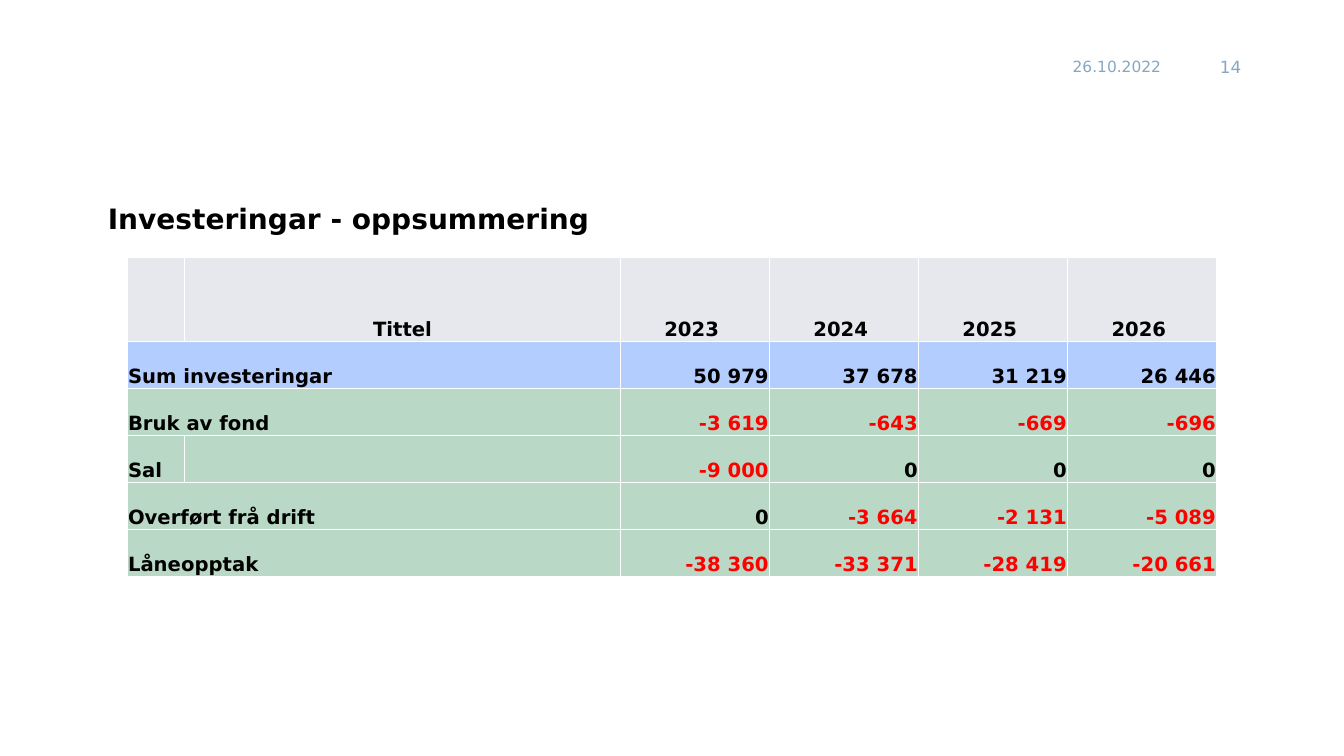
from dataclasses import dataclass

from lxml.etree import SubElement
from pptx import Presentation
from pptx.dml.color import RGBColor
from pptx.enum.text import MSO_ANCHOR, PP_ALIGN
from pptx.oxml.ns import qn
from pptx.util import Inches, Pt


@dataclass(frozen=True)
class Theme:
    font: str = "DejaVu Sans"
    ink: str = "000000"
    negative: str = "FF0000"
    muted: str = "86A7C2"
    header_fill: str = "E7E8ED"
    total_fill: str = "B4CDFF"
    funding_fill: str = "B9D9C6"
    border: str = "FFFFFF"
    title_size: int = 20
    table_size: int = 14
    number_size: int = 12
    date_size: int = 11


@dataclass(frozen=True)
class Box:
    left: int
    top: int
    width: int
    height: int

    def inner(self, left, top, width, height):
        """Return the inner box given in percent of this one."""
        return Box(self.left + round(self.width * left / 100),
                   self.top + round(self.height * top / 100),
                   round(self.width * width / 100),
                   round(self.height * height / 100))


THEME = Theme()
HEADER = ["", "Tittel", "2023 ", "2024 ", "2025 ", "2026 "]
INVESTMENTS = [
    ["Sum investeringar", "", "50 979", "37 678", "31 219", "26 446"],
    ["Bruk av fond", "", "-3 619", "-643", "-669", "-696"],
    ["Sal", "", "-9 000", "0", "0", "0"],
    ["Overført frå drift", "", "0", "-3 664", "-2 131", "-5 089"],
    ["Låneopptak", "", "-38 360", "-33 371", "-28 419", "-20 661"],
]
UNMERGED_LABEL = "Sal"
COLUMN_SHARES = [57, 433] + [148] * 4
ROW_SHARES = [9] + [5] * len(INVESTMENTS)


def add_run(paragraph, text, size, color, bold=False):
    run = paragraph.add_run()
    run.text = text
    run.font.name = THEME.font
    run.font.size = Pt(size)
    run.font.bold = bold
    run.font.color.rgb = RGBColor.from_string(color)


def add_text(slide, box, text, size, color, bold=False, align=PP_ALIGN.LEFT):
    shape = slide.shapes.add_textbox(box.left, box.top, box.width, box.height)
    frame = shape.text_frame
    frame.word_wrap = True
    frame.vertical_anchor = MSO_ANCHOR.MIDDLE
    paragraph = frame.paragraphs[0]
    paragraph.alignment = align
    add_run(paragraph, text, size, color, bold)


def add_page_marks(slide, box):
    add_text(slide, box.inner(0, 0, 61.5, 100), "26.10.2022",
             THEME.date_size, THEME.muted)
    add_text(slide, box.inner(69.5, 0, 30.5, 100), "14",
             THEME.number_size, THEME.muted, align=PP_ALIGN.RIGHT)


def set_borders(cell):
    properties = cell._tc.get_or_add_tcPr()
    for side in ("a:lnL", "a:lnR", "a:lnT", "a:lnB"):
        line = SubElement(properties, qn(side), w=str(Pt(1)))
        fill = SubElement(line, qn("a:solidFill"))
        SubElement(fill, qn("a:srgbClr"), val=THEME.border)


def fill_cell(cell, text, fill, align):
    set_borders(cell)
    cell.fill.solid()
    cell.fill.fore_color.rgb = RGBColor.from_string(fill)
    cell.vertical_anchor = MSO_ANCHOR.BOTTOM
    cell.margin_left = cell.margin_right = cell.margin_top = Inches(0.01)
    cell.margin_bottom = 0
    if text:
        paragraph = cell.text_frame.paragraphs[0]
        paragraph.alignment = align
        color = THEME.negative if text.startswith("-") else THEME.ink
        add_run(paragraph, text, THEME.table_size, color, bold=True)


def add_investment_table(slide, box):
    rows = [HEADER] + INVESTMENTS
    fills = [THEME.header_fill, THEME.total_fill]
    fills += [THEME.funding_fill] * (len(rows) - len(fills))
    table = slide.shapes.add_table(len(rows), len(HEADER), box.left, box.top,
                                   box.width, box.height).table
    table.first_row = table.horz_banding = False
    for column, share in zip(table.columns, COLUMN_SHARES):
        column.width = round(box.width * share / sum(COLUMN_SHARES))
    for row, share in zip(table.rows, ROW_SHARES):
        row.height = round(box.height * share / sum(ROW_SHARES))

    for row_index, (texts, fill) in enumerate(zip(rows, fills)):
        for column_index, text in enumerate(texts):
            if row_index == 0:
                align = PP_ALIGN.CENTER
            else:
                align = PP_ALIGN.LEFT if column_index == 0 else PP_ALIGN.RIGHT
            fill_cell(table.cell(row_index, column_index), text, fill, align)
        if row_index > 0 and texts[0] != UNMERGED_LABEL:
            table.cell(row_index, 0).merge(table.cell(row_index, 1))


def add_summary_slide(presentation):
    slide = presentation.slides.add_slide(presentation.slide_layouts[6])
    page = Box(0, 0, presentation.slide_width, presentation.slide_height)
    add_page_marks(slide, page.inner(79.07, 6.13, 14.03, 5.33))
    add_investment_table(slide, page.inner(9.45, 34, 81.1, 42.27))
    add_text(slide, page.inner(7.28, 26, 86.57, 5.73),
             "Investeringar - oppsummering",
             THEME.title_size, THEME.ink, bold=True)


def main():
    presentation = Presentation()
    presentation.slide_width = Inches(13.33)
    presentation.slide_height = Inches(7.5)
    add_summary_slide(presentation)
    presentation.save("out.pptx")


if __name__ == "__main__":
    main()
